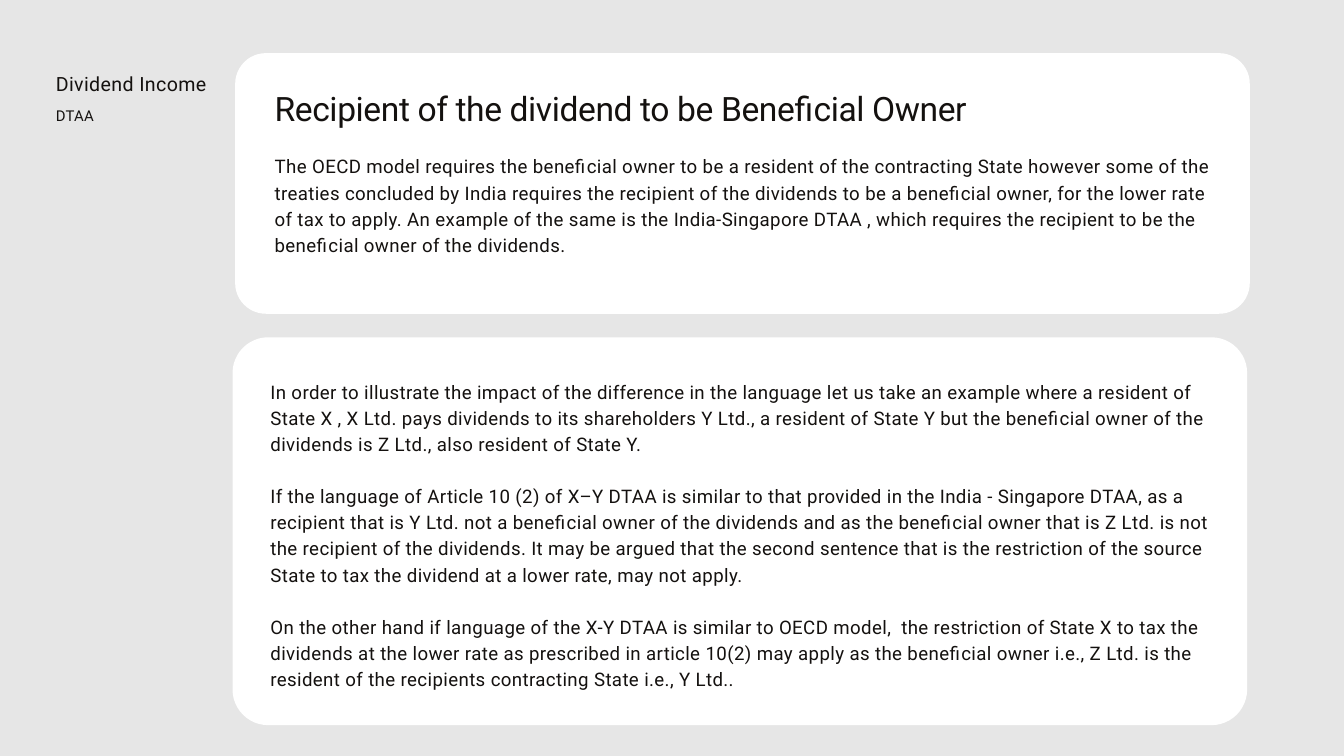
"""Build the slide on beneficial ownership of dividend income."""
from dataclasses import dataclass

from pptx import Presentation
from pptx import util as u
from pptx.dml.color import RGBColor
from pptx.enum import shapes, text

INK, PAPER, BACKDROP = "14110F", "FFFFFF", "E6E6E6"
FONT = "Roboto"


@dataclass
class Card:
    left: float
    top: float
    width: float
    height: float
    radius: float


@dataclass
class TextBlock:
    left: float
    top: float
    width: float
    height: float
    size: float
    leading: float
    tracking: float
    paragraphs: list[str]


CARDS = [
    Card(8.89, 2.01, 38.35, 9.85, 1.16),
    Card(8.79, 12.75, 38.35, 14.66, 1.35),
]

BLOCKS = [
    TextBlock(2.11, 2.64, 6.02, 0.91, 21, 27.3, 0.42, ["Dividend Income"]),
    TextBlock(2.11, 3.91, 6.02, 0.74, 16, 22.4, 0.32, ["DTAA"]),
    TextBlock(10.38, 2.92, 33.58, 2.39, 36, 54.6, -0.43, [
        "Recipient of the dividend to be Beneficial Owner",
    ]),
    TextBlock(10.38, 5.73, 35.6, 5.21, 20, 28, 0.4, [
        "The OECD model requires the beneficial owner to be a resident of the "
        "contracting State however some of the treaties concluded by India "
        "requires the recipient of the dividends to be a beneficial owner, for "
        "the lower rate of tax to apply. An example of the same is the "
        "India-Singapore DTAA , which requires the recipient to be the "
        "beneficial owner of the dividends.",
    ]),
    TextBlock(10.22, 14.24, 35.6, 11.89, 20, 28, 0.4, [
        "In order to illustrate the impact of the difference in the language "
        "let us take an example where a resident of State X , X Ltd. pays "
        "dividends to its shareholders Y Ltd., a resident of State Y but the "
        "beneficial owner of the dividends is Z Ltd., also resident of State Y.",
        "If the language of Article 10 (2) of X–Y DTAA is similar to that "
        "provided in the India - Singapore DTAA, as a recipient that is Y Ltd. "
        "not a beneficial owner of the dividends and as the beneficial owner "
        "that is Z Ltd. is not the recipient of the dividends. It may be argued "
        "that the second sentence that is the restriction of the source State "
        "to tax the dividend at a lower rate, may not apply.",
        "On the other hand if language of the X-Y DTAA is similar to OECD "
        "model,  the restriction of State X to tax the dividends at the lower "
        "rate as prescribed in article 10(2) may apply as the beneficial owner "
        "i.e., Z Ltd. is the resident of the recipients contracting State "
        "i.e., Y Ltd..",
    ]),
]


def paint(fill, colour: str) -> None:
    fill.solid()
    fill.fore_color.rgb = RGBColor.from_string(colour)


def draw_card(s, card: Card) -> None:
    box = (card.left, card.top, card.width, card.height)
    sp = s.shapes.add_shape(shapes.MSO_SHAPE.ROUNDED_RECTANGLE, *map(u.Cm, box))
    sp.adjustments[0] = card.radius / min(card.width, card.height)
    sp.shadow.inherit = False
    paint(sp.fill, PAPER)
    sp.line.fill.background()


def draw_text(s, block: TextBlock) -> None:
    box = (block.left, block.top, block.width, block.height)
    tf = s.shapes.add_textbox(*map(u.Cm, box)).text_frame
    tf.word_wrap = True
    tf.vertical_anchor = text.MSO_ANCHOR.TOP
    tf.margin_left = tf.margin_top = tf.margin_right = tf.margin_bottom = 0
    for i, wording in enumerate(block.paragraphs):
        p = tf.add_paragraph() if i else tf.paragraphs[0]
        p.line_spacing = u.Pt(block.leading)
        p.space_before = u.Pt(block.leading if i else 0)
        p.font.name = FONT
        p.font.size = u.Pt(block.size)
        paint(p.font.fill, INK)
        r = p.add_run()
        r.text = wording
        r._r.get_or_add_rPr().set("spc", str(round(block.tracking * 100)))


def main() -> None:
    prs = Presentation()
    prs.slide_width, prs.slide_height = u.Cm(50.8), u.Cm(28.575)
    s = prs.slides.add_slide(prs.slide_layouts[6])
    paint(s.background.fill, BACKDROP)
    for card in CARDS:
        draw_card(s, card)
    for block in BLOCKS:
        draw_text(s, block)
    prs.save("out.pptx")


if __name__ == "__main__":
    main()
